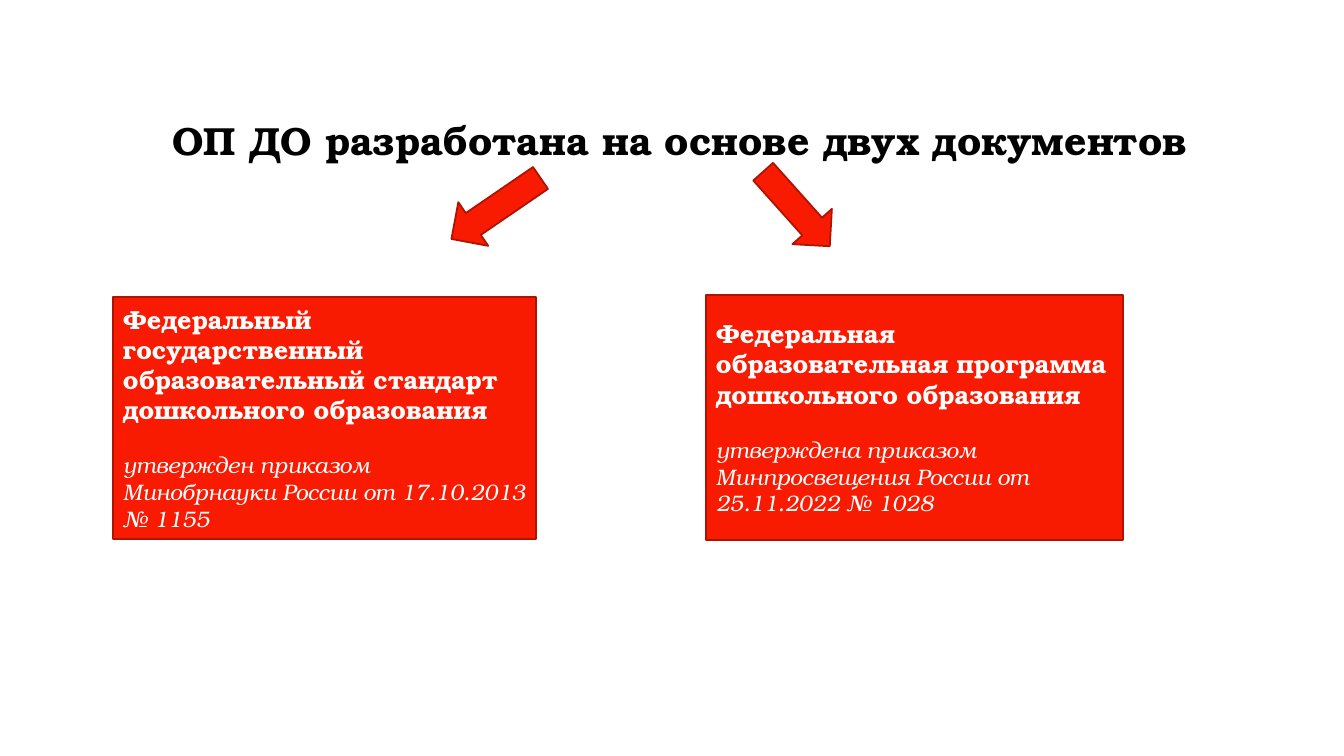
from pptx import Presentation
from pptx.dml.color import RGBColor
from pptx.enum.shapes import MSO_SHAPE
from pptx.enum.text import MSO_ANCHOR, PP_ALIGN
from pptx.util import Pt

EMU_PER_PX = 914400 / 100.8


def px(length):
    return round(length * EMU_PER_PX)


def color(value):
    return RGBColor.from_string(value)


class Page:
    font_name = "TeX Gyre Bonum"
    fill = "F81B02"
    outline = "AF1301"
    heading = {"size": Pt(18), "bold": True}
    detail = {"size": Pt(16), "italic": True}

    def __init__(self, deck):
        self.shapes = deck.slides.add_slide(deck.slide_layouts[6]).shapes

    def add_span(self, para, text, text_color, style):
        span = para.add_run()
        span.text = text
        span.font.color.rgb = color(text_color)
        for name, value in {"name": self.font_name, **style}.items():
            setattr(span.font, name, value)

    def title(self, area, text):
        frame = self.shapes.add_textbox(*map(px, area)).text_frame
        frame.word_wrap = True
        para = frame.paragraphs[0]
        para.alignment = PP_ALIGN.CENTER
        self.add_span(para, text, "000000", {"size": Pt(28), "bold": True})

    def shape(self, kind, area, rotation=0):
        shape = self.shapes.add_shape(kind, *map(px, area))
        shape.rotation = rotation
        shape.shadow.inherit = False
        shape.fill.solid()
        shape.fill.fore_color.rgb = color(self.fill)
        shape.line.color.rgb = color(self.outline)
        shape.line.width = Pt(1.25)
        return shape

    def document(self, area, name, approval):
        frame = self.shape(MSO_SHAPE.RECTANGLE, area).text_frame
        frame.word_wrap = True
        frame.vertical_anchor = MSO_ANCHOR.MIDDLE
        lines = [(frame.paragraphs[0], name, self.heading),
                 (frame.add_paragraph(), approval, self.detail)]
        for para, text, style in lines:
            para.alignment = PP_ALIGN.LEFT
            self.add_span(para, text, "FFFFFF", style)
        lines[1][0].space_before = Pt(19)


def main():
    deck = Presentation()
    deck.slide_width, deck.slide_height = px(1344), px(756)
    page = Page(deck)

    # Title
    page.title((162, 111, 1049, 57), "ОП ДО разработана на основе двух документов ")

    # Arrows from the title to the documents
    page.shape(MSO_SHAPE.RIGHT_ARROW, (442, 182, 108, 53), 145.6)
    page.shape(MSO_SHAPE.DOWN_ARROW, (770, 159, 53, 100), 318.2)

    # The two documents
    page.document((113, 297, 423, 242),
                  "Федеральный государственный образовательный стандарт дошкольного образования",
                  "утвержден приказом Минобрнауки России от 17.10.2013 № 1155")
    page.document((706, 295, 417, 245),
                  "Федеральная образовательная программа дошкольного образования",
                  "утверждена приказом Минпросвещения России от 25.11.2022 № 1028")

    deck.save("out.pptx")


if __name__ == "__main__":
    main()
